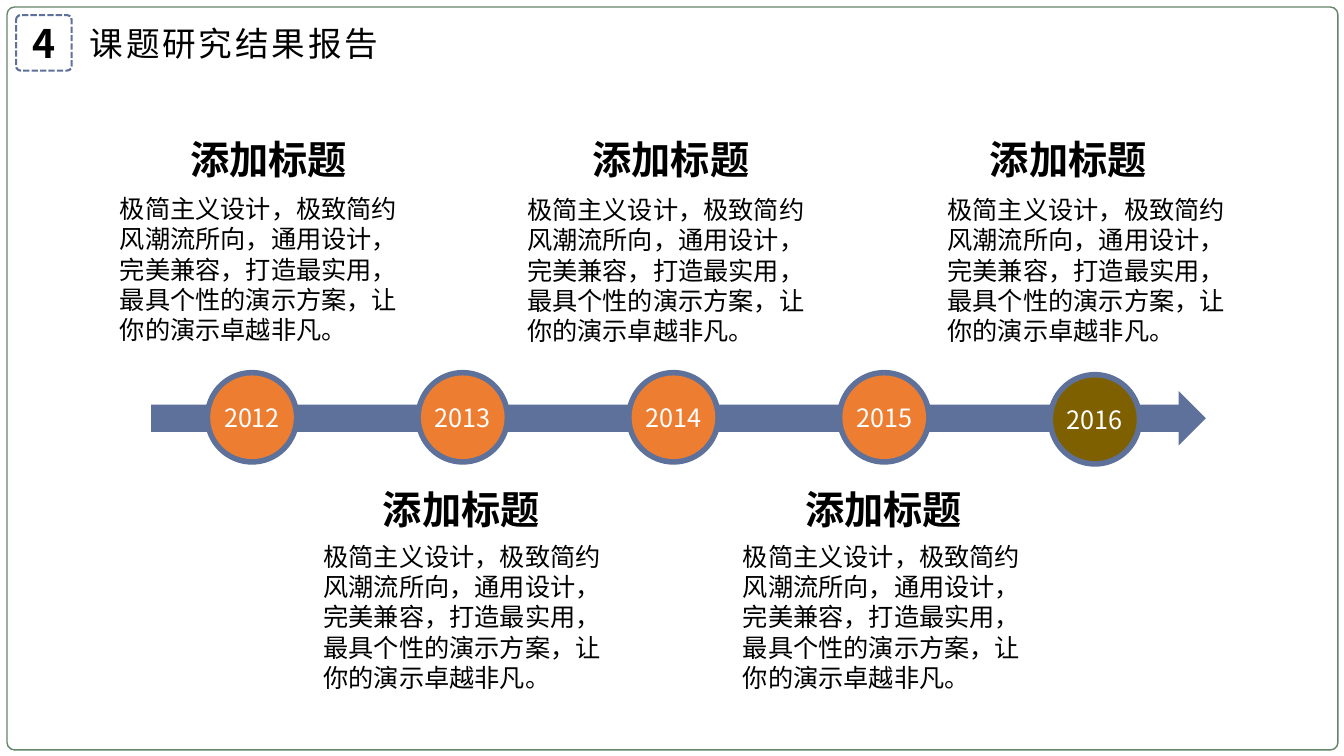
from lxml import etree
from pptx import Presentation
from pptx import util as u
from pptx.dml.color import RGBColor
from pptx.enum import dml, shapes, text
from pptx.oxml import ns

BLUE = RGBColor(0x5E, 0x71, 0x9B)
GREEN = RGBColor(0x63, 0x86, 0x6A)
ORANGE = RGBColor(0xED, 0x7D, 0x31)
OLIVE = RGBColor(0x7F, 0x60, 0x00)
BLACK = RGBColor(0, 0, 0)
WHITE = RGBColor(0xFF, 0xFF, 0xFF)
FONT = "Noto Sans CJK SC"
LINE_PITCH = 1.2
HEADING = "添加标题"
BODY = ("极简主义设计，极致简约风潮流所向，通用设计，完美兼容，打造最实用，"
        "最具个性的演示方案，让你的演示卓越非凡。")

deck = Presentation()
deck.slide_width, deck.slide_height = u.Inches(13.33), u.Inches(7.5)
page = deck.slides.add_slide(deck.slide_layouts[5])


def add_preset(kind, left, top, width, height, fill=None, line=None, weight=1):
    shape = page.shapes.add_shape(kind, *map(u.Inches, (left, top, width, height)))
    shape.shadow.inherit = False
    if fill is None:
        shape.fill.background()
    else:
        shape.fill.solid()
        shape.fill.fore_color.rgb = fill
    if line is None:
        shape.line.fill.background()
    else:
        shape.line.color.rgb = line
        shape.line.width = u.Pt(weight)
    return shape


def write(box, words, size, color=BLACK, bold=False, centred=True, margin=None):
    """Fill a box with one paragraph in the slide's font."""
    frame = box.text_frame
    frame.text = words
    frame.word_wrap = True
    if margin is not None:
        frame.margin_left = frame.margin_right = margin
        frame.margin_top = frame.margin_bottom = margin
    para = frame.paragraphs[0]
    if centred:
        para.alignment = text.PP_ALIGN.CENTER
        frame.vertical_anchor = text.MSO_ANCHOR.MIDDLE
    else:
        para.line_spacing = u.Pt(size * LINE_PITCH)
    span = para.runs[0]
    span.font.size, span.font.bold, span.font.name = u.Pt(size), bold, FONT
    span.font.color.rgb = color
    etree.SubElement(span.font._element, ns.qn("a:ea")).set("typeface", FONT)
    return span


# Frame, section number and title
frame_outline = add_preset(shapes.MSO_SHAPE.ROUNDED_RECTANGLE,
                           0.07, 0.07, 13.2, 7.37, line=GREEN)
frame_outline.adjustments[0] = 0.01

number = add_preset(shapes.MSO_SHAPE.ROUNDED_RECTANGLE,
                    0.16, 0.15, 0.55, 0.55, line=BLUE, weight=1.5)
number.adjustments[0] = 0.08
number.line.dash_style = dml.MSO_LINE.SQUARE_DOT
write(number, "4", 28, bold=True, margin=0)

title = page.shapes.title
title.left, title.top = u.Inches(0.72), u.Inches(0.15)
title.width, title.height = u.Inches(3.2), u.Inches(0.55)
title_span = write(title, "课题研究结果报告", 24)
title_span.font._element.set("spc", "200")
title.text_frame.auto_size = text.MSO_AUTO_SIZE.NONE

# Timeline: five evenly spaced years on an arrow
add_preset(shapes.MSO_SHAPE.RIGHT_ARROW, 1.5, 3.88, 10.46, 0.54, fill=BLUE)
FIRST_CENTRE, YEAR_STEP = 2.5, 2.09
RING, DISC = 0.94, 0.83
for index, year in enumerate(range(2012, 2017)):
    last = year == 2016
    centre_x = FIRST_CENTRE + index * YEAR_STEP
    centre_y = 4.16 if last else 4.14
    for size, color in ((RING, BLUE), (DISC, OLIVE if last else ORANGE)):
        disc = add_preset(shapes.MSO_SHAPE.OVAL, centre_x - size / 2,
                          centre_y - size / 2, size, size, fill=color)
    write(disc, str(year), 18, WHITE, margin=0)

# Notes above and below: heading left, heading top, body left, body top, body width
NOTES = [
    (1.79, 1.29, 1.09, 1.87, 3.18),
    (5.78, 1.29, 5.13, 1.88, 3.07),
    (9.72, 1.29, 9.3, 1.88, 2.97),
    (3.7, 4.77, 3.11, 5.32, 2.96),
    (7.89, 4.77, 7.27, 5.32, 3.1),
]
for heading_left, heading_top, body_left, body_top, body_width in NOTES:
    heading = page.shapes.add_textbox(u.Inches(heading_left), u.Inches(heading_top),
                                      u.Inches(1.77), u.Inches(0.57))
    write(heading, HEADING, 28, bold=True, centred=False)
    heading.text_frame.word_wrap = False
    body = page.shapes.add_textbox(u.Inches(body_left), u.Inches(body_top),
                                   u.Inches(body_width), u.Inches(1.62))
    write(body, BODY, 18, centred=False)
    for box in (heading, body):
        box.text_frame.auto_size = text.MSO_AUTO_SIZE.SHAPE_TO_FIT_TEXT

deck.save("out.pptx")
